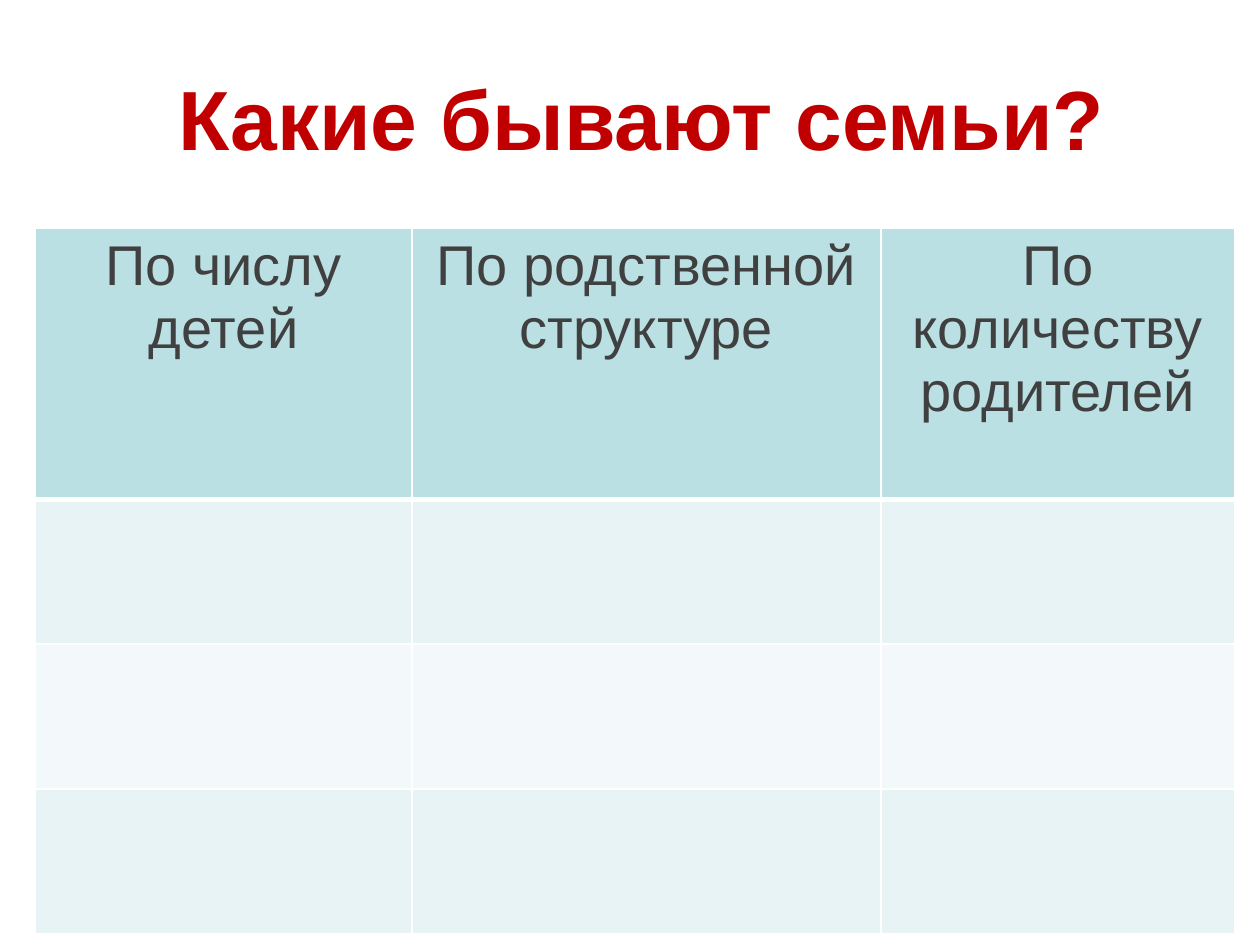
from dataclasses import dataclass

from lxml.etree import SubElement
from pptx import Presentation
from pptx.dml.color import RGBColor
from pptx.enum.text import MSO_ANCHOR, PP_ALIGN
from pptx.oxml.ns import qn
from pptx.slide import Slide
from pptx.table import _Cell
from pptx.text.text import TextFrame
from pptx.util import Pt

FONT = "Arial"
WHITE = "FFFFFF"
COLUMN_WIDTHS = (215.3, 267.8, 202.3)


@dataclass(frozen=True)
class RowStyle:
    height: float
    fill: str
    bottom_border: float = 1
    texts: tuple[str, ...] = ("", "", "")


ROWS = (
    RowStyle(154.8, "BBE0E3", 3,
             ("По числу детей", "По родственной структуре", "По количеству родителей")),
    RowStyle(82.8, "E7F3F4"),
    RowStyle(82.8, "F3F9FA"),
    RowStyle(82.8, "E7F3F4"),
)


def color(value: str) -> RGBColor:
    return RGBColor.from_string(value)


def write_centered(text_frame: TextFrame, text: str, size: float,
                   text_color: str, bold: bool = False) -> None:
    text_frame.text = text
    paragraph = text_frame.paragraphs[0]
    paragraph.alignment = PP_ALIGN.CENTER
    for run in paragraph.runs:
        run.font.name = FONT
        run.font.size = Pt(size)
        run.font.bold = bold
        run.font.color.rgb = color(text_color)


def add_title(slide: Slide) -> None:
    title = slide.shapes.add_textbox(Pt(36), Pt(21.6), Pt(648), Pt(90))
    text_frame = title.text_frame
    text_frame.word_wrap = True
    text_frame.vertical_anchor = MSO_ANCHOR.MIDDLE
    text_frame.margin_left = Pt(20.5)
    write_centered(text_frame, "Какие бывают семьи?", 48, "C00000", bold=True)


def set_borders(cell: _Cell, bottom_width: float) -> None:
    """Draw white cell borders; call before filling, as the XML order requires."""
    properties = cell._tc.get_or_add_tcPr()
    for side, width in (("L", 1), ("R", 1), ("T", 1), ("B", bottom_width)):
        line = SubElement(properties, qn(f"a:ln{side}"), w=str(Pt(width)))
        fill = SubElement(line, qn("a:solidFill"))
        SubElement(fill, qn("a:srgbClr"), val=WHITE)


def add_family_table(slide: Slide) -> None:
    table = slide.shapes.add_table(
        len(ROWS), len(COLUMN_WIDTHS), Pt(20.2), Pt(130.5),
        Pt(sum(COLUMN_WIDTHS)), Pt(sum(row.height for row in ROWS))).table
    for column, width in zip(table.columns, COLUMN_WIDTHS):
        column.width = Pt(width)
    for row, style in zip(table.rows, ROWS):
        row.height = Pt(style.height)
        for cell, text in zip(row.cells, style.texts):
            set_borders(cell, style.bottom_border)
            cell.fill.solid()
            cell.fill.fore_color.rgb = color(style.fill)
            if text:
                write_centered(cell.text_frame, text, 32, "404040")


def main() -> None:
    presentation = Presentation()
    presentation.slide_width = Pt(720)
    presentation.slide_height = Pt(540)
    slide = presentation.slides.add_slide(presentation.slide_layouts[6])
    add_title(slide)
    add_family_table(slide)
    presentation.save("out.pptx")


if __name__ == "__main__":
    main()
